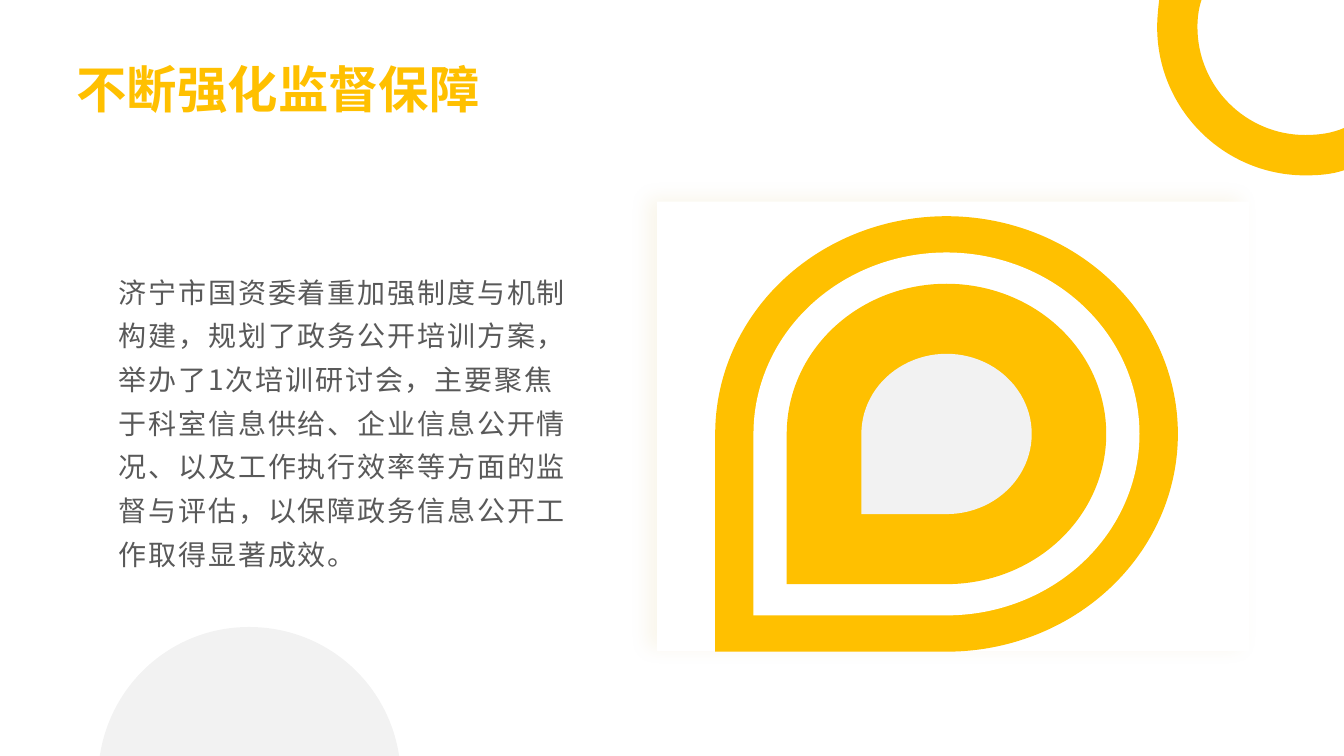
from lxml import etree
from pptx import Presentation
from pptx.dml.color import RGBColor
from pptx.enum import shapes as kinds, text as modes
from pptx.oxml import ns
from pptx.util import Pt

FONT = "Noto Sans CJK SC"
GOLD, WHITE, PALE, GREY = "FFC000", "FFFFFF", "F2F2F2", "595959"
WIDE, HIGH = 960, 540
TITLE = ("不断强化监督保障", (54.72, 28.08, 850.32, 56.88))
BODY = (
    "济宁市国资委着重加强制度与机制构建，规划了政务公开培训方案，"
    "举办了1次培训研讨会，主要聚焦于科室信息供给、企业信息公开情况、"
    "以及工作执行效率等方面的监督与评估，以保障政务信息公开工作取得显著成效。",
    (77.76, 185.76, 344.88, 43.2),
)
RING = [
    [(858.24, 0)],
    [(856.08, 6.48), (855.36, 12.96), (855.36, 19.44)],
    [(855.36, 61.92), (889.92, 96.48), (932.4, 96.48)],
    [(942.48, 96.48), (951.84, 95.04), (WIDE, 91.44)],
    [(WIDE, 121.68)],
    [(951.12, 124.56), (942.48, 125.28), (932.4, 125.28)],
    [(874.08, 125.28), (826.56, 77.76), (826.56, 19.44)],
    [(826.56, 12.96), (827.28, 6.48), (828, 0)],
    [(858.24, 0)],
]
DISC = [
    [(285.12, HIGH)],
    [(71.28, HIGH)],
    [(79.2, 487.44), (123.84, 447.84), (177.84, 447.84)],
    [(232.56, 447.84), (277.2, 487.44), (285.12, HIGH)],
]
CARD = (469.44, 144, 422.64, 321.12)
CENTRE = (676.08, 309.96)
DROPS = [
    (311.04, 330.48, GOLD),
    (259.2, 275.76, WHITE),
    (214.56, 228.24, GOLD),
    (172.08, 182.16, GOLD),
    (114.48, 121.68, PALE),
]


def color(code):
    return RGBColor.from_string(code)


def sub(node, tag, **attrs):
    child = etree.SubElement(node, ns.qn(tag))
    for name, value in attrs.items():
        child.set(name, str(value))
    return child


def paint(shape, code):
    shape.shadow.inherit = False
    shape.fill.solid()
    shape.fill.fore_color.rgb = color(code)
    shape.line.fill.background()
    return shape


def outline(parts, code):
    spots = [(x * 100, y * 100) for part in parts for x, y in part]
    pen = slide.shapes.build_freeform(*spots[0], scale=Pt(0.01))
    pen.add_line_segments(spots[1:], close=False)
    shape = pen.convert_to_shape()
    lines = iter(list(shape._element.iter(ns.qn("a:lnTo"))))
    for part in parts[1:]:
        first, *rest = [next(lines) for _ in part]
        if rest:
            curve = etree.Element(ns.qn("a:cubicBezTo"))
            first.addprevious(curve)
            for line in (first, *rest):
                curve.append(line[0])
                line.getparent().remove(line)
    return paint(shape, code)


def write(frame, words, size, code, bold=False):
    frame.word_wrap = True
    frame.auto_size = modes.MSO_AUTO_SIZE.NONE
    para = frame.paragraphs[0]
    para.alignment = modes.PP_ALIGN.LEFT
    run = para.add_run()
    run.text = words
    run.font.size = Pt(size)
    run.font.name = FONT
    run.font.bold = bold
    run.font.color.rgb = color(code)
    sub(run._r.get_or_add_rPr(), "a:ea", typeface=FONT)
    return para, run


deck = Presentation()
deck.slide_width, deck.slide_height = Pt(WIDE), Pt(HIGH)
slide = deck.slides.add_slide(deck.slide_layouts[5])

outline(RING, GOLD)
disc = outline(DISC, "000000")
tint = next(disc._element.spPr.iter(ns.qn("a:srgbClr")))
sub(tint, "a:alpha", val=5000)

words, place = TITLE
title = slide.shapes.title
title.left, title.top, title.width, title.height = map(Pt, place)
frame = title.text_frame
frame.margin_left = frame.margin_right = frame.margin_top = frame.margin_bottom = 0
frame.vertical_anchor = modes.MSO_ANCHOR.BOTTOM
write(frame, words, 36, GOLD, True)

words, place = BODY
box = slide.shapes.add_textbox(*map(Pt, place))
para, run = write(box.text_frame, words, 20, GREY)
para.line_spacing = 1.3
para.space_after = Pt(10)
run._r.get_or_add_rPr().set("spc", "130")

card = paint(slide.shapes.add_shape(kinds.MSO_SHAPE.RECTANGLE, *map(Pt, CARD)), WHITE)
effects = card._element.spPr.find(ns.qn("a:effectLst"))
glow = sub(effects, "a:outerShdw", blurRad=Pt(14), dist=Pt(7), dir=200 * 60000, rotWithShape=0)
sub(sub(glow, "a:srgbClr", val="BF9000"), "a:alpha", val=8000)

group = slide.shapes.add_group_shape()
x, y = CENTRE
for w, h, code in DROPS:
    spot = map(Pt, (x - w / 2, y - h / 2, w, h))
    drop = paint(group.shapes.add_shape(kinds.MSO_SHAPE.TEAR, *spot), code)
    drop.rotation = 270
    drop._element.spPr.xfrm.set("flipH", "1")

deck.save("out.pptx")
